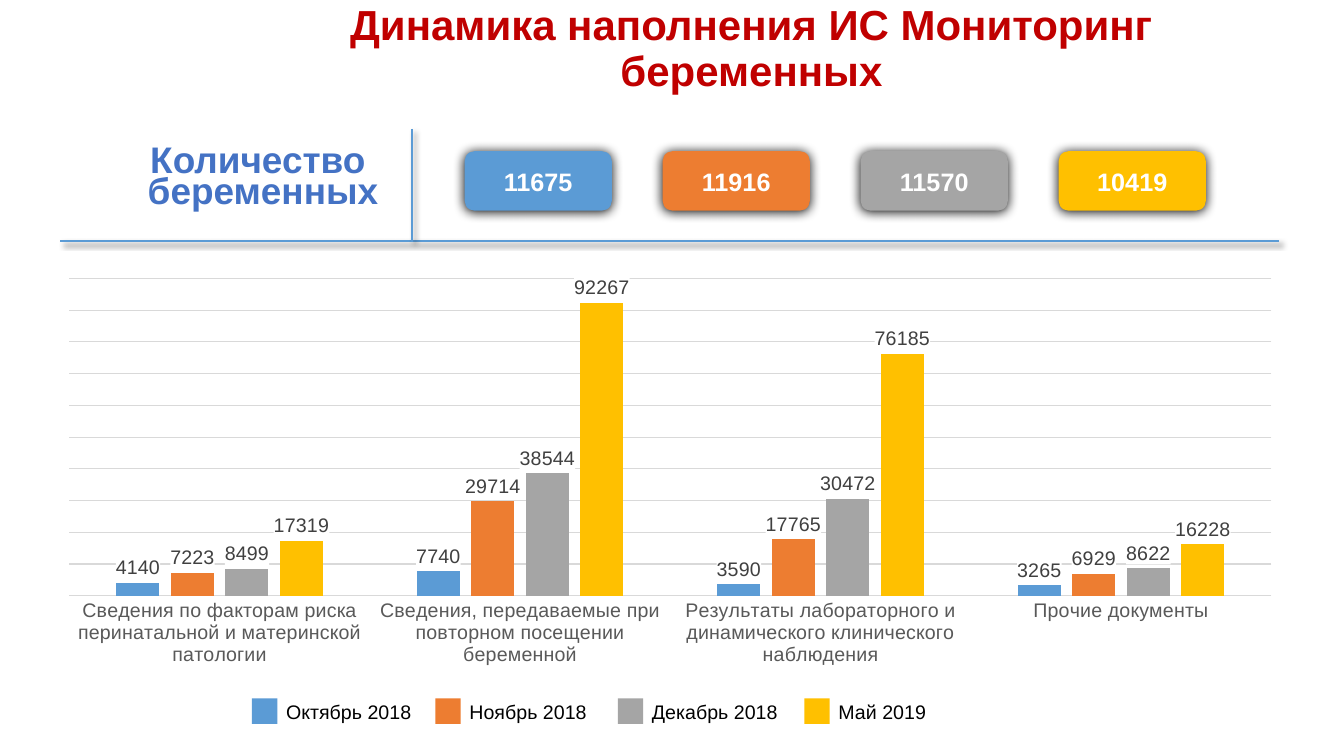
from lxml.etree import SubElement
from pptx import Presentation
from pptx.chart.data import CategoryChartData
from pptx.dml.color import RGBColor
from pptx.enum.chart import XL_CHART_TYPE, XL_LABEL_POSITION, XL_TICK_MARK
from pptx.enum.shapes import MSO_CONNECTOR, MSO_SHAPE
from pptx.enum.text import MSO_ANCHOR, MSO_AUTO_SIZE, PP_ALIGN
from pptx.oxml import parse_xml
from pptx.oxml.ns import nsdecls, qn
from pptx.util import Cm, Pt

FONT = "Arial"
HUES = {
    "red": "C00000", "head": "4472C4", "blue": "5B9BD5",
    "orange": "ED7D31", "gray": "A5A5A5", "gold": "FFC000",
    "grid": "D9D9D9", "axis": "595959", "label": "404040",
    "black": "000000", "white": "FFFFFF",
}
# Month, hue, count of women, left of legend mark, chart values
MONTHS = [
    ("Октябрь 2018", "blue", "11675", 6.35, (4140, 7740, 3590, 3265)),
    ("Ноябрь 2018", "orange", "11916", 10.97, (7223, 29714, 17765, 6929)),
    ("Декабрь 2018", "gray", "11570", 15.57, (8499, 38544, 30472, 8622)),
    ("Май 2019", "gold", "10419", 20.27, (17319, 92267, 76185, 16228)),
]
TOPICS = [
    "Сведения по факторам риска перинатальной и материнской патологии",
    "Сведения, передаваемые при повторном посещении беременной",
    "Результаты лабораторного и динамического клинического наблюдения",
    "Прочие документы",
]


def color(name):
    return RGBColor.from_string(HUES[name])


def style(font, size, hue, bold=False):
    font.name, font.size, font.bold = FONT, Pt(size), bold
    font.color.rgb = color(hue)


def add_run(para, text, size, hue, bold=False):
    run = para.add_run()
    run.text = text
    style(run.font, size, hue, bold)
    return run


def paint(shape, hue):
    shape.fill.solid()
    shape.fill.fore_color.rgb = color(hue)
    shape.line.fill.background()


def add_shadow(shape, alpha, blur, dist, angle):
    props = shape._element.spPr
    for old in props.findall(qn("a:effectLst")):
        props.remove(old)
    props.append(parse_xml(
        f'<a:effectLst {nsdecls("a")}><a:outerShdw blurRad="{Pt(blur)}" '
        f'dist="{Pt(dist)}" dir="{angle * 60000}" algn="ctr" rotWithShape="0">'
        f'<a:srgbClr val="{HUES["black"]}"><a:alpha val="{alpha * 1000}"/>'
        '</a:srgbClr></a:outerShdw></a:effectLst>'))


def add_title(slide):
    title = slide.shapes.title
    title.left, title.top = Cm(5.44), Cm(0.51)
    title.width, title.height = Cm(27), Cm(1.5)
    frame = title.text_frame
    frame.word_wrap = True
    frame.auto_size = MSO_AUTO_SIZE.NONE
    frame.vertical_anchor = MSO_ANCHOR.MIDDLE
    para = frame.paragraphs[0]
    para.alignment, para.line_spacing = PP_ALIGN.CENTER, 0.9
    add_run(para, "Динамика наполнения ИС Мониторинг беременных", 30, "red", True)


def add_head(slide):
    box = slide.shapes.add_textbox(Cm(3.38), Cm(3.4), Cm(6.5), Cm(2.26))
    frame = box.text_frame
    frame.word_wrap = True
    frame.vertical_anchor = MSO_ANCHOR.MIDDLE
    para = frame.paragraphs[0]
    para.alignment, para.line_spacing = PP_ALIGN.CENTER, 0.7
    first = add_run(para, "Количество ", 26.4, "head", True)
    para.add_line_break()
    last = add_run(para, "беременных", 26.4, "head", True)
    for run in (first, last):
        run._r.rPr.insert(0, parse_xml(
            f'<a:ln {nsdecls("a")} w="{Pt(0.75)}"><a:solidFill>'
            f'<a:srgbClr val="{HUES["white"]}"/></a:solidFill></a:ln>'))


def add_rule(slide, left, top, right, bottom):
    rule = slide.shapes.add_connector(
        MSO_CONNECTOR.STRAIGHT, Cm(left), Cm(top), Cm(right), Cm(bottom))
    rule.line.color.rgb = color("blue")
    rule.line.width = Pt(1.5)
    add_shadow(rule, 40, 4, 3, 45)


def add_pill(slide, left, text, hue):
    pill = slide.shapes.add_shape(
        MSO_SHAPE.ROUNDED_RECTANGLE, Cm(left), Cm(3.81), Cm(3.71), Cm(1.5))
    paint(pill, hue)
    add_shadow(pill, 100, 8.5, 1, 90)
    pill.text_frame.vertical_anchor = MSO_ANCHOR.MIDDLE
    para = pill.text_frame.paragraphs[0]
    para.alignment = PP_ALIGN.CENTER
    add_run(para, text, 18, "white", True)


def add_key(group, left, text, hue):
    mark = group.shapes.add_shape(
        MSO_SHAPE.RECTANGLE, Cm(left), Cm(17.6), Cm(0.64), Cm(0.64))
    mark.shadow.inherit = False
    paint(mark, hue)
    box = group.shapes.add_textbox(Cm(left + 0.61), Cm(17.5), Cm(3.96), Cm(0.86))
    box.text_frame.word_wrap = True
    add_run(box.text_frame.paragraphs[0], text, 14, "black")


def set_plot(chart):
    area = chart._chartSpace.chart.plotArea
    for old in area.findall(qn("c:layout")):
        area.remove(old)
    layout = parse_xml(f'<c:layout {nsdecls("c")}><c:manualLayout/></c:layout>')
    parts = {"layoutTarget": "inner", "xMode": "edge", "yMode": "edge",
             "x": "0.02", "y": "0.02", "w": "0.96", "h": "0.79"}
    for name, value in parts.items():
        SubElement(layout[0], qn("c:" + name)).set("val", value)
    area.insert(0, layout)


def add_labels(row):
    labels = row.data_labels
    labels.show_value = True
    labels.position = XL_LABEL_POSITION.OUTSIDE_END
    style(labels.font, 14, "label")
    # White backing keeps the grid off the numbers
    labels._element.find(qn("c:txPr")).addprevious(parse_xml(
        f'<c:spPr {nsdecls("c", "a")}><a:solidFill>'
        f'<a:srgbClr val="{HUES["white"]}"/></a:solidFill></c:spPr>'))


def add_bars(slide):
    data = CategoryChartData()
    data.categories = TOPICS
    for month, _, _, _, values in MONTHS:
        data.add_series(month, values)
    chart = slide.shapes.add_chart(
        XL_CHART_TYPE.COLUMN_CLUSTERED, Cm(1.12), Cm(6.81), Cm(31.55), Cm(10.13),
        data).chart
    style(chart.font, 14, "black")
    chart.has_legend = chart.has_title = False
    set_plot(chart)

    # Axes
    cats, scale = chart.category_axis, chart.value_axis
    cats.major_tick_mark = XL_TICK_MARK.NONE
    style(cats.tick_labels.font, 14, "axis")
    scale.visible = False
    scale.minimum_scale, scale.maximum_scale = 0, 100000
    scale.major_unit = 10000
    scale.has_major_gridlines = True
    for line in (cats.format.line, scale.major_gridlines.format.line):
        line.color.rgb = color("grid")
        line.width = Pt(0.75)

    # Columns
    plot = chart.plots[0]
    plot.gap_width, plot.overlap, plot.vary_by_categories = 219, -27, False
    for row, (_, hue, _, _, _) in zip(plot.series, MONTHS):
        row.format.fill.solid()
        row.format.fill.fore_color.rgb = color(hue)
        add_labels(row)


def main():
    deck = Presentation()
    deck.slide_width, deck.slide_height = Cm(33.87), Cm(19.05)
    slide = deck.slides.add_slide(deck.slide_layouts[5])
    add_title(slide)
    add_bars(slide)

    # Counts above the chart
    for i, (_, hue, count, _, _) in enumerate(MONTHS):
        add_pill(slide, 11.71 + 4.99 * i, count, hue)
    add_head(slide)
    add_rule(slide, 1.52, 6.08, 32.23, 6.08)
    add_rule(slide, 10.39, 3.25, 10.39, 6.1)

    # Legend
    group = slide.shapes.add_group_shape()
    for month, hue, _, left, _ in MONTHS:
        add_key(group, left, month, hue)
    deck.save("out.pptx")


if __name__ == "__main__":
    main()
